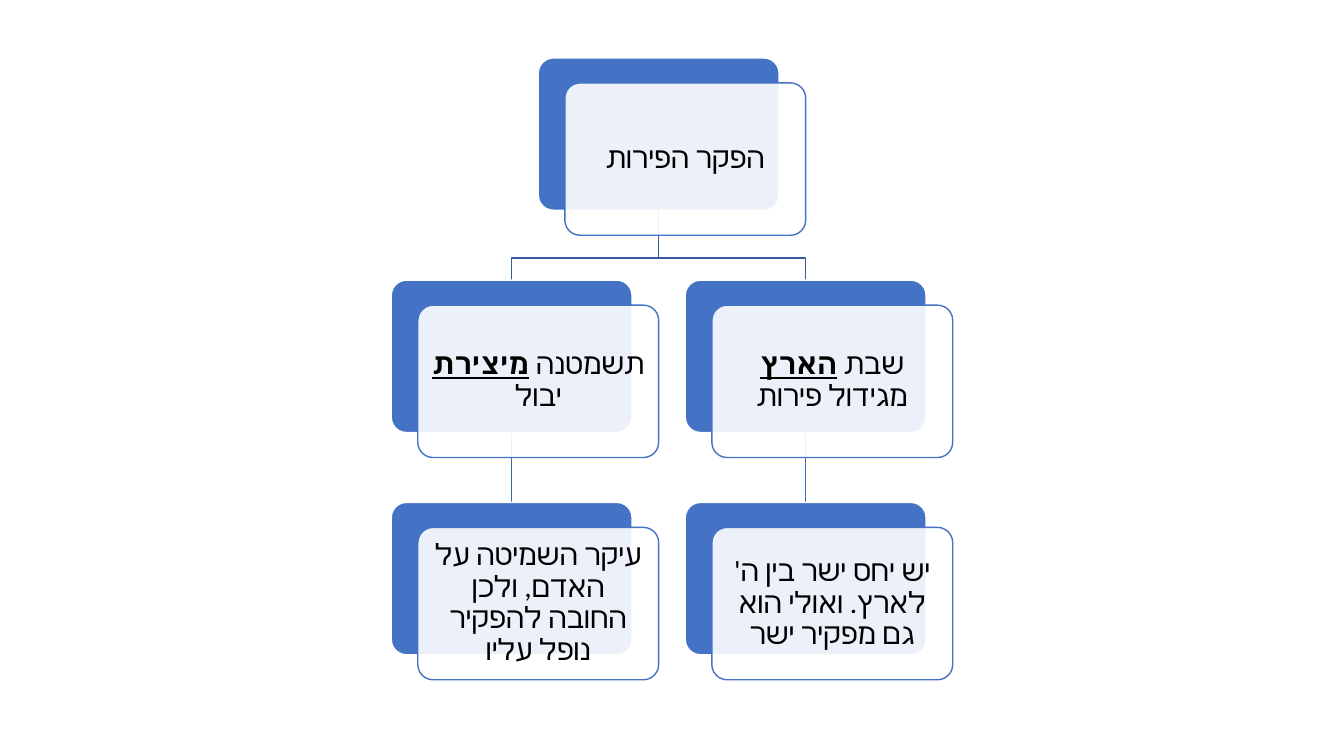
from lxml import etree
from pptx import Presentation
from pptx import util as u
from pptx.dml.color import RGBColor
from pptx.enum import shapes, text
from pptx.oxml.ns import qn

BLUE = RGBColor(0x44, 0x72, 0xC4)
UPPER_LINE = RGBColor(0x36, 0x5B, 0x9D)
LOWER_LINE = RGBColor(0x3E, 0x67, 0xB2)
WHITE = RGBColor(0xFF, 0xFF, 0xFF)
BLACK = RGBColor(0, 0, 0)

CARD_WIDTH, CARD_HEIGHT = 6.07, 3.84
SHIFT_X, SHIFT_Y = 0.67, 0.63
FIRST_LEFT, FIRST_TOP = 9.86, 1.46
COLUMN_STEP, ROW_STEP = 7.41, 5.6
BEND_DROP = 1.2

EMPHASIS = {"bold": True, "underline": True}
NODES = [
    (0.5, 0, [("הפקר הפירות", {})]),
    (1, 1, [("שבת ", {}), ("הארץ ", EMPHASIS), ("מגידול פירות", {})]),
    (1, 2, [("יש יחס ישר בין ה' לארץ. ואולי הוא גם מפקיר ישר", {})]),
    (0, 1, [("תשמטנה ", {}), ("מיצירת", EMPHASIS), (" יבול", {})]),
    (0, 2, [("עיקר השמיטה על האדם, ולכן החובה להפקיר נופל עליו", {})]),
]


def set_values(target, values):
    for name, value in values.items():
        setattr(target, name, value)


def card_corner(column, row):
    return FIRST_LEFT + column * COLUMN_STEP, FIRST_TOP + row * ROW_STEP


def style_line(shape, color):
    shape.line.color.rgb = color
    shape.line.width = u.Pt(1)


def add_card(page, left, top, fill, line):
    card = page.shapes.add_shape(
        shapes.MSO_SHAPE.ROUNDED_RECTANGLE,
        u.Cm(left), u.Cm(top), u.Cm(CARD_WIDTH), u.Cm(CARD_HEIGHT))
    card.adjustments[0] = 0.1
    card.shadow.inherit = False
    card.fill.solid()
    card.fill.fore_color.rgb = fill
    style_line(card, line)
    return card


def set_opacity(shape, percent):
    color = shape.fill._xPr.find(qn("a:solidFill"))[0]
    etree.SubElement(color, qn("a:alpha"), val=str(percent * 1000))


def write_text(card, runs):
    frame = card.text_frame
    inset = u.Cm(0.23)
    set_values(frame, {
        "word_wrap": True, "vertical_anchor": text.MSO_ANCHOR.MIDDLE,
        "margin_left": inset, "margin_right": inset,
        "margin_top": inset, "margin_bottom": inset})
    para = frame.paragraphs[0]
    set_values(para, {
        "alignment": text.PP_ALIGN.CENTER,
        "line_spacing": 0.9, "space_after": u.Pt(7)})
    para._p.get_or_add_pPr().set("rtl", "1")
    for words, emphasis in runs:
        span = para.add_run()
        span.text = words
        set_values(span.font, {"name": "Calibri", "size": u.Pt(21), **emphasis})
        span.font.color.rgb = BLACK
        etree.SubElement(span._r.get_or_add_rPr(), qn("a:cs"), typeface="Calibri")


def add_node(page, column, row, runs):
    left, top = card_corner(column, row)
    add_card(page, left, top, BLUE, WHITE)
    front = add_card(page, left + SHIFT_X, top + SHIFT_Y, WHITE, BLUE)
    set_opacity(front, 90)
    write_text(front, runs)


def add_branch(page, column):
    root_left, root_top = card_corner(0.5, 0)
    child_left, child_top = card_corner(column, 1)
    root_x, child_x = (left + CARD_WIDTH / 2 for left in (root_left, child_left))
    start_y = root_top + CARD_HEIGHT
    bend_y = start_y + BEND_DROP
    builder = page.shapes.build_freeform(u.Cm(root_x), u.Cm(start_y))
    corners = [(root_x, bend_y), (child_x, bend_y), (child_x, child_top)]
    builder.add_line_segments([(u.Cm(x), u.Cm(y)) for x, y in corners], close=False)
    branch = builder.convert_to_shape()
    branch.shadow.inherit = False
    branch.fill.background()
    style_line(branch, UPPER_LINE)


def add_stem(page, column):
    left, top = card_corner(column, 1)
    x = u.Cm(left + CARD_WIDTH / 2)
    stem = page.shapes.add_connector(
        shapes.MSO_CONNECTOR.STRAIGHT,
        x, u.Cm(top + CARD_HEIGHT), x, u.Cm(top + ROW_STEP))
    style_line(stem, LOWER_LINE)
    etree.SubElement(stem._element.spPr, qn("a:effectLst"))


def main():
    deck = Presentation()
    set_values(deck, {"slide_width": u.Cm(33.87), "slide_height": u.Cm(19.05)})
    page = deck.slides.add_slide(deck.slide_layouts[6])
    for column in (0, 1):
        add_stem(page, column)
        add_branch(page, column)
    for column, row, runs in NODES:
        add_node(page, column, row, runs)
    deck.save("out.pptx")


if __name__ == "__main__":
    main()
